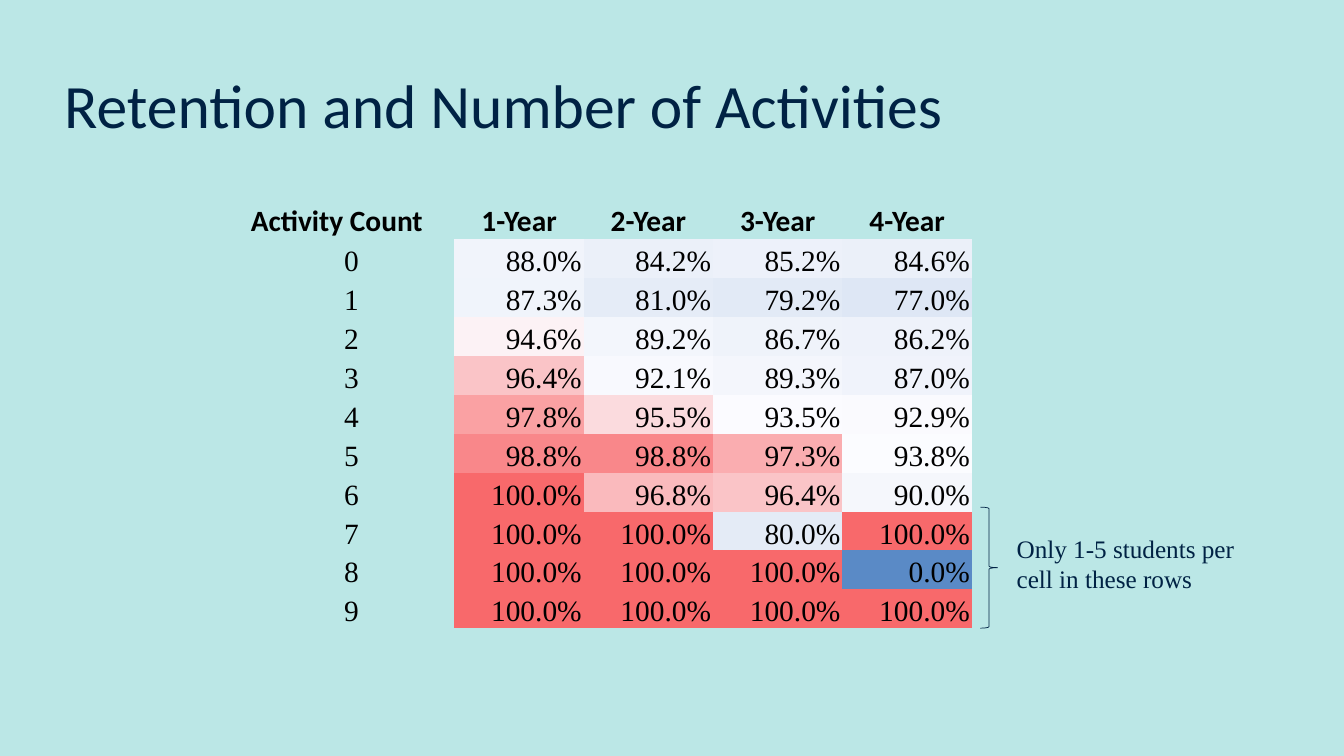
from dataclasses import dataclass
from typing import Any

from pptx import Presentation
from pptx import util as u
from pptx.dml.color import RGBColor
from pptx.enum import shapes, text


@dataclass(frozen=True)
class Theme:
    background: str = "BBE7E6"
    navy: str = "002244"
    black: str = "000000"
    low: str = "5A8AC6"
    middle: str = "FCFCFF"
    high: str = "F8696B"
    sans: str = "Calibri"
    serif: str = "Times New Roman"
    title_pt: float = 44
    table_pt: float = 21
    note_pt: float = 18
    brace_pt: float = 0.5


@dataclass(frozen=True)
class Box:
    left: float
    top: float
    width: float
    height: float

    def lengths(self) -> list[u.Length]:
        return [u.Cm(v) for v in (self.left, self.top, self.width, self.height)]


@dataclass(frozen=True)
class Label:
    words: str
    box: Box
    font: str
    size: float
    frame: dict[str, Any]
    line_spacing: float = 1.0


THEME = Theme()
MIDPOINT = 94.2
ROW_HEIGHT = 0.98
COUNT_WIDTH, YEAR_WIDTH = 5.18, 3.26
NO_STYLE_NO_GRID = "{2D5ABB26-0587-4C30-8999-92F81FD0307C}"
HEADERS = ("Activity Count", "1-Year", "2-Year", "3-Year", "4-Year")
RETENTION = (
    (88.0, 84.2, 85.2, 84.6),
    (87.3, 81.0, 79.2, 77.0),
    (94.6, 89.2, 86.7, 86.2),
    (96.4, 92.1, 89.3, 87.0),
    (97.8, 95.5, 93.5, 92.9),
    (98.8, 98.8, 97.3, 93.8),
    (100.0, 96.8, 96.4, 90.0),
    (100.0, 100.0, 80.0, 100.0),
    (100.0, 100.0, 100.0, 0.0),
    (100.0, 100.0, 100.0, 100.0),
)
TABLE = Box(6.27, 5.05, COUNT_WIDTH + 4 * YEAR_WIDTH, 11 * ROW_HEIGHT)
BRACE = Box(24.71, 12.78, 0.43, 3.05)
LABELS = (
    Label("Retention and Number of Activities", Box(1.37, 0.43, 31.04, 4.6),
          THEME.sans, THEME.title_pt,
          {"vertical_anchor": text.MSO_ANCHOR.MIDDLE}, 0.9),
    Label("Only 1-5 students per cell in these rows", Box(25.37, 13.31, 6.65, 1.8),
          THEME.serif, THEME.note_pt,
          {"auto_size": text.MSO_AUTO_SIZE.SHAPE_TO_FIT_TEXT}),
)


def set_attributes(target: Any, values: dict[str, Any]) -> None:
    for name, value in values.items():
        setattr(target, name, value)


def add_run(p: Any, words: str, font: str, size: float, color: str,
            bold: bool = False) -> None:
    r = p.add_run()
    r.text = words
    set_attributes(r.font, {"name": font, "size": u.Pt(size), "bold": bold})
    r.font.color.rgb = RGBColor.from_string(color)


def heat_color(rate: float) -> RGBColor:
    """Blend low to middle below the midpoint, and middle to high above it."""
    if rate <= MIDPOINT:
        start, end, share = THEME.low, THEME.middle, rate / MIDPOINT
    else:
        start, end = THEME.middle, THEME.high
        share = (rate - MIDPOINT) / (100 - MIDPOINT)
    pairs = zip(RGBColor.from_string(start), RGBColor.from_string(end))
    return RGBColor(*(round(a + (b - a) * share) for a, b in pairs))


def add_label(s: Any, label: Label) -> None:
    tf = s.shapes.add_textbox(*label.box.lengths()).text_frame
    set_attributes(tf, {"word_wrap": True, **label.frame})
    p = tf.paragraphs[0]
    p.line_spacing = label.line_spacing
    add_run(p, label.words, label.font, label.size, THEME.navy)


def fill_cell(cell: Any, words: str, align: Any, header: bool = False) -> None:
    set_attributes(cell, {
        "vertical_anchor": text.MSO_ANCHOR.BOTTOM,
        "margin_left": u.Cm(0.05), "margin_right": u.Cm(0.05),
        "margin_top": u.Cm(0.05), "margin_bottom": u.Cm(0),
    })
    cell.fill.background()
    p = cell.text_frame.paragraphs[0]
    p.alignment = align
    font = THEME.sans if header else THEME.serif
    add_run(p, words, font, THEME.table_pt, THEME.black, header)


def add_retention_table(s: Any) -> None:
    frame = s.shapes.add_table(len(RETENTION) + 1, len(HEADERS), *TABLE.lengths())
    table = frame.table
    set_attributes(table, {"first_row": False, "horz_banding": False})
    table._tbl.tblPr[0].text = NO_STYLE_NO_GRID
    for i, column in enumerate(table.columns):
        column.width = u.Cm(YEAR_WIDTH if i else COUNT_WIDTH)
    for row in table.rows:
        row.height = u.Cm(ROW_HEIGHT)

    align = text.PP_ALIGN
    for i, header in enumerate(HEADERS):
        fill_cell(table.cell(0, i), header, align.CENTER if i else align.LEFT, True)
    for count, rates in enumerate(RETENTION):
        fill_cell(table.cell(count + 1, 0), str(count), align.CENTER)
        for year, rate in enumerate(rates, 1):
            cell = table.cell(count + 1, year)
            fill_cell(cell, f"{rate:.1f}%", align.RIGHT)
            cell.fill.solid()
            cell.fill.fore_color.rgb = heat_color(rate)


def add_brace(s: Any) -> None:
    sp = s.shapes.add_shape(shapes.MSO_SHAPE.RIGHT_BRACE, *BRACE.lengths())
    sp.shadow.inherit = False
    sp.fill.background()
    sp.line.width = u.Pt(THEME.brace_pt)
    sp.line.color.rgb = RGBColor.from_string(THEME.navy)


def main() -> None:
    prs = Presentation()
    set_attributes(prs, {"slide_width": u.Cm(33.87), "slide_height": u.Cm(19.05)})
    s = prs.slides.add_slide(prs.slide_layouts[6])
    s.background.fill.solid()
    s.background.fill.fore_color.rgb = RGBColor.from_string(THEME.background)
    title, note = LABELS
    add_label(s, title)
    add_retention_table(s)
    add_brace(s)
    add_label(s, note)
    prs.save("out.pptx")


if __name__ == "__main__":
    main()
